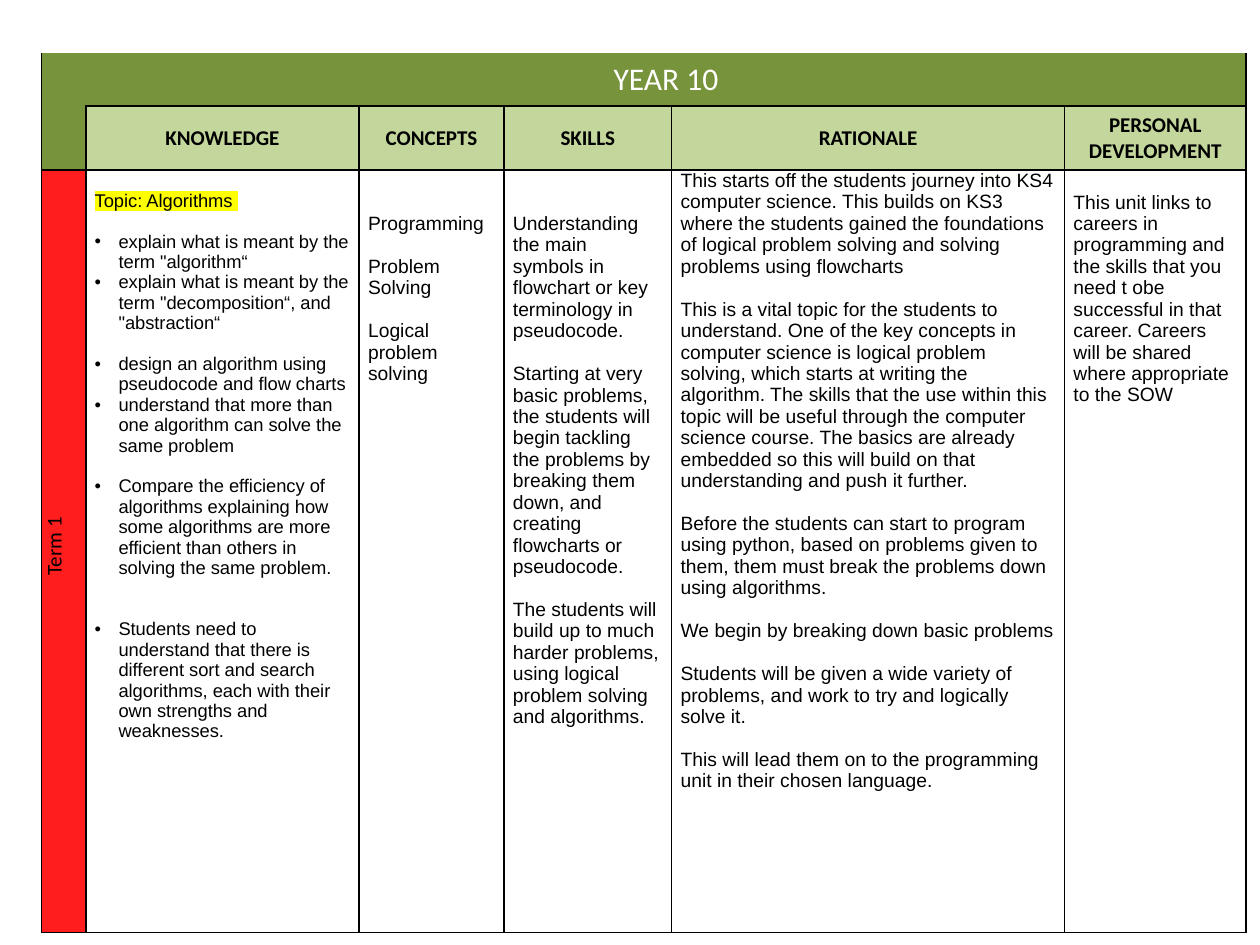
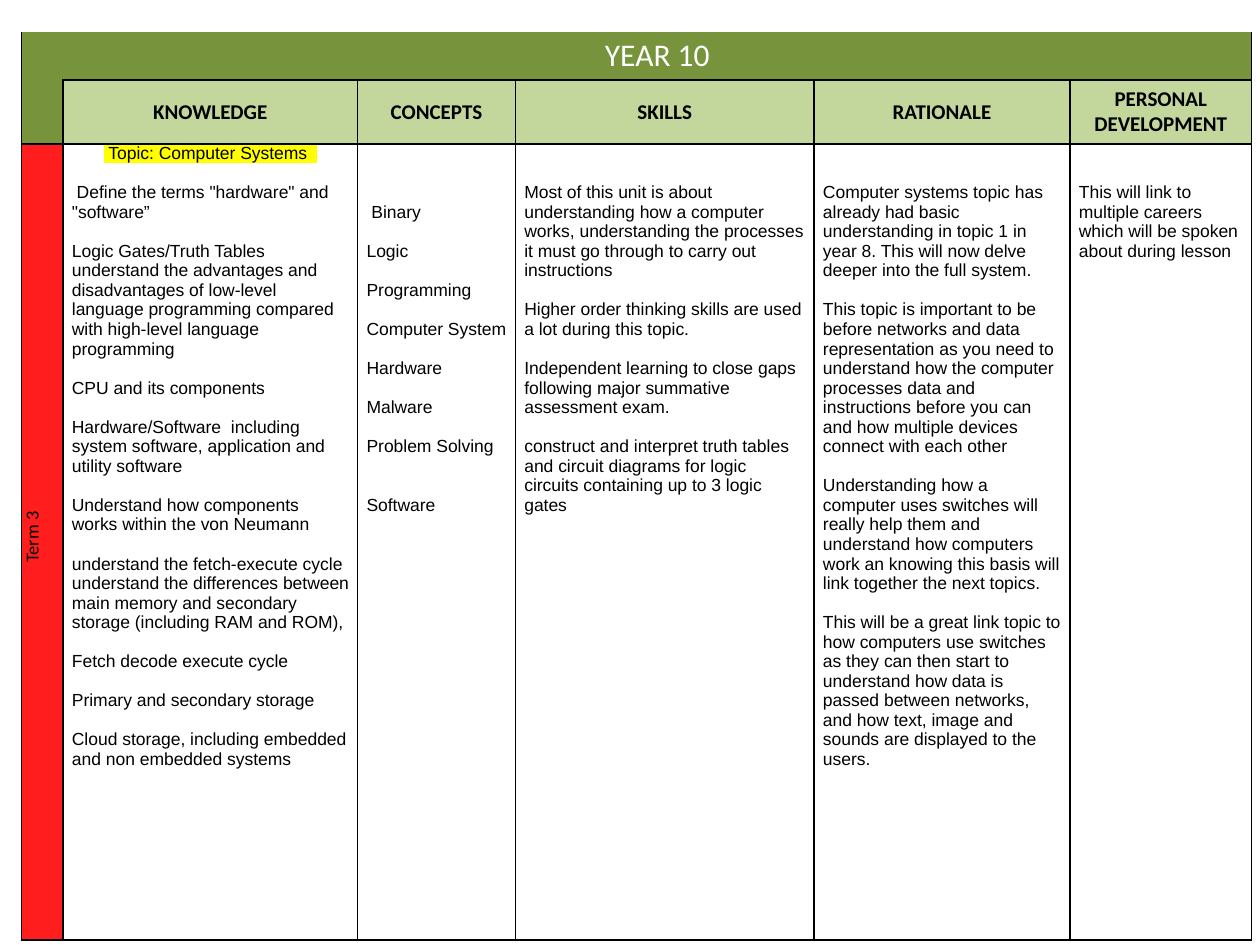
from dataclasses import dataclass

from lxml import etree
from pptx import Presentation
from pptx.dml.color import RGBColor
from pptx.enum.text import MSO_ANCHOR, PP_ALIGN
from pptx.oxml.ns import qn
from pptx.util import Cm, Pt

CENTER, LEFT = PP_ALIGN.CENTER, PP_ALIGN.LEFT
MIDDLE, TOP = MSO_ANCHOR.MIDDLE, MSO_ANCHOR.TOP


@dataclass(frozen=True)
class Theme:
    title_fill: str = "77933C"
    header_fill: str = "C3D69B"
    term_fill: str = "FF1D1D"
    paper: str = "FFFFFF"
    ink: str = "000000"
    highlight: str = "FFFF00"
    heading_font: str = "Calibri"
    body_font: str = "Arial"
    title_size: float = 18
    header_size: float = 12
    line_height: float = 1.117
    border: float = 1
    inset: float = 0.18
    hanging: float = 0.48
    term_indent: float = 0.2


@dataclass(frozen=True)
class Para:
    text: str
    gap: int = 1
    bullet: bool = False
    marked: bool = False
    align: int = LEFT


HEADERS = ["KNOWLEDGE", "CONCEPTS", "SKILLS", "RATIONALE", "PERSONAL DEVELOPMENT"]

ALGORITHMS = dict(
    term="Term 1", term_size=12, left=0.84, top=1.07,
    widths=[0.89, 5.51, 2.92, 3.38, 7.92, 3.66], heights=[1.07, 1.29, 15.37],
    sizes=[10.5, 11, 11, 11, 11],
    columns=[
        [
            Para("Topic: Algorithms ", marked=True),
            Para('explain what is meant by the term "algorithm“', bullet=True),
            Para('explain what is meant by the term "decomposition“, and "abstraction“', 0, True),
            Para("design an algorithm using pseudocode and flow charts", bullet=True),
            Para("understand that more than one algorithm can solve the same problem", 0, True),
            Para("Compare the efficiency of algorithms explaining how some algorithms are more "
                 "efficient than others in solving the same problem.", bullet=True),
            Para("Students need to understand that there is different sort and search algorithms, "
                 "each with their own strengths and weaknesses.", 2, True),
        ],
        [Para("Programming", 2), Para("Problem Solving"), Para("Logical problem solving")],
        [
            Para("Understanding the main symbols in flowchart or key terminology in pseudocode.", 2),
            Para("Starting at very basic problems, the students will begin tackling the problems by "
                 "breaking them down, and creating flowcharts or pseudocode."),
            Para("The students will build up to much harder problems, using logical problem solving "
                 "and algorithms."),
        ],
        [
            Para("This starts off the students journey into KS4 computer science. This builds on KS3 "
                 "where the students gained the foundations of logical problem solving and solving "
                 "problems using flowcharts", 0),
            Para("This is a vital topic for the students to understand. One of the key concepts in "
                 "computer science is logical problem solving, which starts at writing the algorithm. "
                 "The skills that the use within this topic will be useful through the computer "
                 "science course. The basics are already embedded so this will build on that "
                 "understanding and push it further."),
            Para("Before the students can start to program using python, based on problems given to "
                 "them, them must break the problems down using algorithms."),
            Para("We begin by breaking down basic problems"),
            Para("Students will be given a wide variety of problems, and work to try and logically "
                 "solve it."),
            Para("This will lead them on to the programming unit in their chosen language."),
        ],
        [Para("This unit links to careers in programming and the skills that you need t obe successful "
              "in that career. Careers will be shared where appropriate to the SOW")],
    ],
)

COMPUTER_SYSTEMS = dict(
    term="Term 3", term_size=10.5, left=0.43, top=0.64,
    widths=[0.84, 5.94, 3.18, 6.02, 5.16, 3.66], heights=[0.97, 1.29, 16.05],
    sizes=[10] * 5,
    columns=[
        [
            Para(" Topic: Computer Systems  ", 0, marked=True, align=CENTER),
            Para(' Define the terms "hardware" and "software”'),
            Para("Logic Gates/Truth Tables"),
            Para("understand the advantages and disadvantages of low-level language programming "
                 "compared with high-level language programming", 0),
            Para("CPU and its components"),
            Para("Hardware/Software  including system software, application and utility software"),
            Para("Understand how components works within the von Neumann"),
            Para("understand the fetch-execute cycle"),
            Para("understand the differences between main memory and secondary storage "
                 "(including RAM and ROM),", 0),
            Para("Fetch decode execute cycle"),
            Para("Primary and secondary storage"),
            Para("Cloud storage, including embedded and non embedded systems"),
        ],
        [
            Para(" Binary", 3), Para("Logic"), Para("Programming"), Para("Computer System"),
            Para("Hardware"), Para("Malware"), Para("Problem Solving"), Para("Software", 2),
        ],
        [
            Para("Most of this unit is about understanding how a computer works, understanding the "
                 "processes it must go through to carry out instructions", 2),
            Para("Higher order thinking skills are used a lot during this topic."),
            Para("Independent learning to close gaps following major summative assessment exam."),
            Para("construct and interpret truth tables and circuit diagrams for logic circuits "
                 "containing up to 3 logic gates"),
        ],
        [
            Para("Computer systems topic has already had basic understanding in topic 1 in year 8. "
                 "This will now delve deeper into the full system.", 2),
            Para("This topic is important to be before networks and data representation as you need "
                 "to understand how the computer processes data and instructions before you can and "
                 "how multiple devices connect with each other"),
            Para("Understanding how a computer uses switches will really help them and understand how "
                 "computers work an knowing this basis will link together the next topics."),
            Para("This will be a great link topic to how computers use switches as they can then start "
                 "to understand how data is passed between networks, and how text, image and sounds "
                 "are displayed to the users."),
        ],
        [Para("This will link to multiple careers which will be spoken about during lesson", 2)],
    ],
)


class Deck:
    def __init__(self, theme):
        self.theme = theme
        self.prs = Presentation()
        self.prs.slide_width, self.prs.slide_height = Cm(25.4), Cm(19.05)
        self.s = None

    def new_slide(self):
        self.s = self.prs.slides.add_slide(self.prs.slide_layouts[6])

    def grid(self, left, top, widths, heights):
        frame = self.s.shapes.add_table(len(heights), len(widths), Cm(left), Cm(top),
                                        Cm(sum(widths)), Cm(sum(heights)))
        table = frame.table
        table.first_row = table.horz_banding = False
        for column, width in zip(table.columns, widths):
            column.width = Cm(width)
        for row, height in zip(table.rows, heights):
            row.height = Cm(height)
        return table

    def cell(self, cell, fill, sides="LRTB", anchor=MIDDLE):
        inset = Cm(self.theme.inset)
        form = dict(margin_left=inset, margin_right=inset, margin_top=0, margin_bottom=0,
                    vertical_anchor=anchor)
        for name, value in form.items():
            setattr(cell, name, value)
        cell.fill.solid()
        cell.fill.fore_color.rgb = RGBColor.from_string(fill)
        tcPr = cell._tc.get_or_add_tcPr()
        for i, side in enumerate("LRTB"):
            ln = etree.Element(qn(f"a:ln{side}"), w=str(Pt(self.theme.border)))
            if side in sides:
                solid = etree.SubElement(ln, qn("a:solidFill"))
                etree.SubElement(solid, qn("a:srgbClr"), val=self.theme.ink)
            else:
                etree.SubElement(ln, qn("a:noFill"))
            tcPr.insert(i, ln)

    def run(self, p, text, size, font, color=None, bold=False):
        r = p.add_run()
        r.text = text
        for name, value in dict(size=Pt(size), name=font, bold=bold).items():
            setattr(r.font, name, value)
        r.font.color.rgb = RGBColor.from_string(color or self.theme.ink)
        return r

    def heading(self, cell, text, size, color=None, bold=False):
        p = cell.text_frame.paragraphs[0]
        p.alignment = CENTER
        self.run(p, text, size, self.theme.heading_font, color, bold)
        return p

    def term(self, cell, text, size):
        self.cell(cell, self.theme.term_fill)
        p = self.heading(cell, text, size)
        p._p.get_or_add_pPr().set("marL", str(Cm(self.theme.term_indent)))
        cell._tc.get_or_add_tcPr().set("vert", "vert270")

    def body(self, cell, paras, size):
        self.cell(cell, self.theme.paper, anchor=TOP)
        line = size * self.theme.line_height
        cell.margin_top = Pt(paras[0].gap * line)
        tf = cell.text_frame
        for i, para in enumerate(paras):
            p = tf.add_paragraph() if i else tf.paragraphs[0]
            p.alignment = para.align
            if i:
                p.space_before = Pt(para.gap * line)
            r = self.run(p, para.text, size, self.theme.body_font)
            if para.bullet:
                self.bullet(p)
            if para.marked:
                self.mark(r)

    def bullet(self, p):
        pPr = p._p.get_or_add_pPr()
        hanging = Cm(self.theme.hanging)
        pPr.set("marL", str(hanging))
        pPr.set("indent", str(-hanging))
        etree.SubElement(pPr, qn("a:buFont"), typeface=self.theme.body_font)
        etree.SubElement(pPr, qn("a:buChar"), char="•")

    def mark(self, r):
        highlight = etree.Element(qn("a:highlight"))
        etree.SubElement(highlight, qn("a:srgbClr"), val=self.theme.highlight)
        r._r.get_or_add_rPr().find(qn("a:latin")).addprevious(highlight)

    def term_plan(self, term, term_size, left, top, widths, heights, sizes, columns):
        t = self.theme
        self.new_slide()
        table = self.grid(left, top, widths, heights)
        last = len(widths) - 1
        for row in range(2):
            self.cell(table.cell(row, 0), t.title_fill, "LB")
        for col in range(1, last + 1):
            self.cell(table.cell(0, col), t.title_fill, "RB")
        table.cell(0, 0).merge(table.cell(1, 0))
        table.cell(0, 1).merge(table.cell(0, last))
        self.heading(table.cell(0, 1), "YEAR 10", t.title_size, t.paper)
        self.term(table.cell(2, 0), term, term_size)
        for col, (header, paras, size) in enumerate(zip(HEADERS, columns, sizes), 1):
            self.cell(table.cell(1, col), t.header_fill)
            self.heading(table.cell(1, col), header, t.header_size, bold=True)
            self.body(table.cell(2, col), paras, size)


def main():
    deck = Deck(Theme())
    for plan in (ALGORITHMS, COMPUTER_SYSTEMS):
        deck.term_plan(**plan)
    deck.prs.save("out.pptx")


if __name__ == "__main__":
    main()
